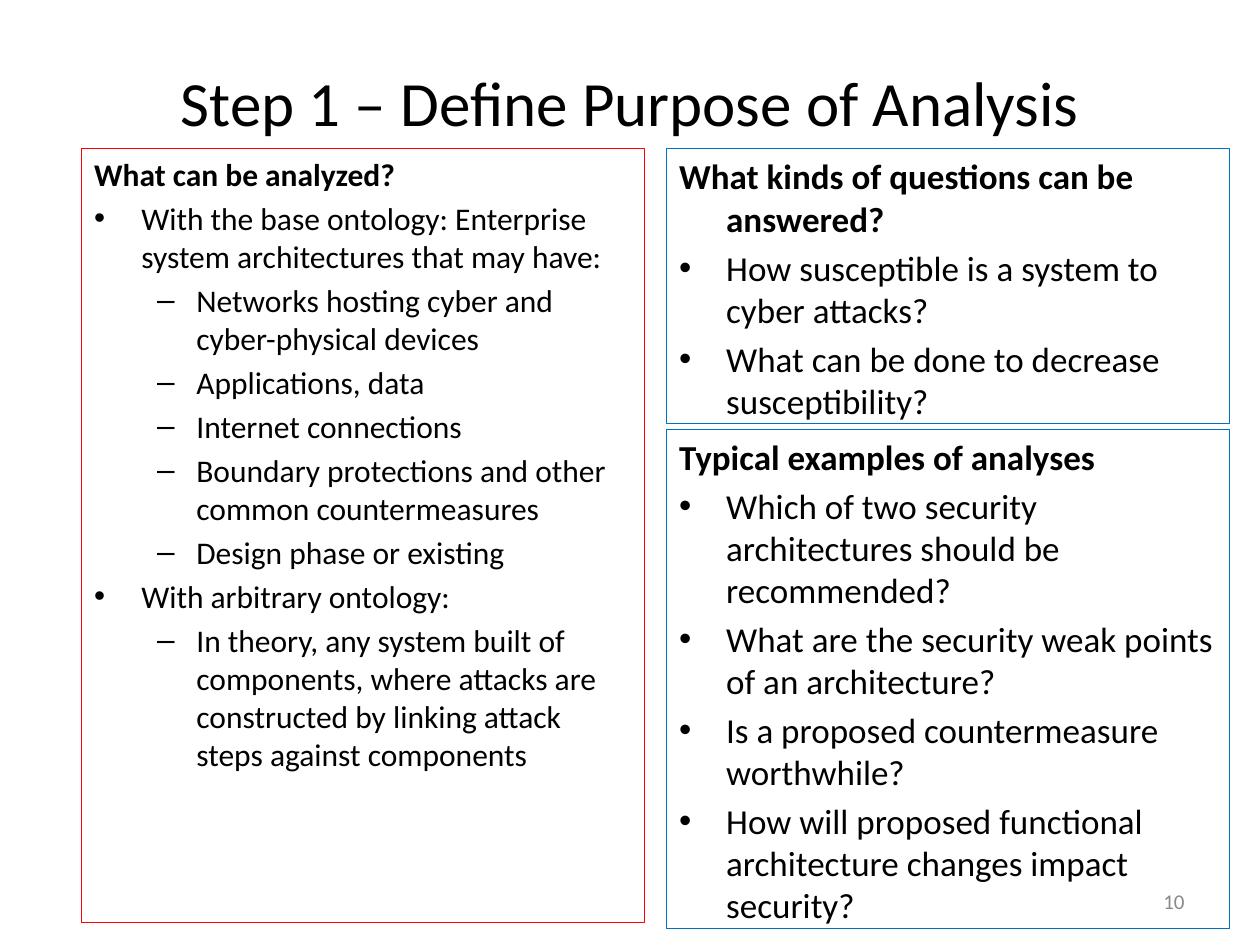
from dataclasses import dataclass

from lxml.etree import SubElement
from pptx import Presentation
from pptx.dml.color import RGBColor
from pptx.enum.shapes import MSO_SHAPE as Shape
from pptx.enum.text import MSO_ANCHOR as Anchor, PP_ALIGN as Align
from pptx.oxml.ns import qn
from pptx.util import Cm, Pt

COLORS = {"text": "000000", "number": "898989", "red": "FF0000", "blue": "0070C0"}
FONT = "Calibri"


@dataclass(frozen=True)
class Style:
    margin: float
    hanging: float
    bullet: str = ""
    bold: bool = False


HEADING = Style(0.95, 0.95, bold=True)
BULLET = Style(0.95, 0.95, "•")
DASH = Style(2.06, 0.79, "–")


@dataclass(frozen=True)
class Panel:
    left: float
    top: float
    height: float
    line: str
    size: int
    items: list[tuple[Style, str]]


@dataclass(frozen=True)
class Label:
    text: str
    left: float
    top: float
    width: float
    height: float
    size: int
    color: str
    align: Align


PANEL_WIDTH = 11.35
PANEL_TOP = 3
RIGHT_LEFT = 13.44

PANELS = [
    Panel(1.65, PANEL_TOP, 15.6, "red", 18, [
        (HEADING, "What can be analyzed?"),
        (BULLET, "With the base ontology: Enterprise system architectures that may have:"),
        (DASH, "Networks hosting cyber and cyber-physical devices"),
        (DASH, "Applications, data"),
        (DASH, "Internet connections"),
        (DASH, "Boundary protections and other common countermeasures"),
        (DASH, "Design phase or existing"),
        (BULLET, "With arbitrary ontology:"),
        (DASH, "In theory, any system built of components, where attacks are "
               "constructed by linking attack steps against components"),
    ]),
    Panel(RIGHT_LEFT, PANEL_TOP, 5.54, "blue", 20, [
        (HEADING, "What kinds of questions can be answered?"),
        (BULLET, "How susceptible is a system to cyber attacks?"),
        (BULLET, "What can be done to decrease susceptibility?"),
    ]),
    Panel(RIGHT_LEFT, 8.66, 10.06, "blue", 20, [
        (HEADING, "Typical examples of analyses"),
        (BULLET, "Which of two security architectures should be recommended?"),
        (BULLET, "What are the security weak points of an architecture?"),
        (BULLET, "Is a proposed countermeasure worthwhile?"),
        (BULLET, "How will proposed functional architecture changes impact security?"),
    ]),
]

LABELS = [
    Label("Step 1 – Define Purpose of Analysis", 1.27, 1.35, 22.86, 1.4, 36, "text", Align.CENTER),
    Label("10", 18.2, 17.65, 5.93, 1.02, 12, "number", Align.RIGHT),
]


def color(name: str) -> RGBColor:
    return RGBColor.from_string(COLORS[name])


def set_font(paragraph, size: int, color_name: str, bold: bool = False) -> None:
    font = paragraph.font
    font.name = FONT
    font.size = Pt(size)
    font.bold = bold
    font.color.rgb = color(color_name)


def set_indent(paragraph, style: Style) -> None:
    properties = paragraph._p.get_or_add_pPr()
    properties.set("marL", str(Cm(style.margin)))
    properties.set("indent", str(-Cm(style.hanging)))
    if style.bullet:
        SubElement(properties, qn("a:buFont"), typeface="Arial")
        SubElement(properties, qn("a:buChar"), char=style.bullet)
    else:
        SubElement(properties, qn("a:buNone"))


def draw_label(slide, label: Label) -> None:
    shape = slide.shapes.add_textbox(
        Cm(label.left), Cm(label.top), Cm(label.width), Cm(label.height))
    frame = shape.text_frame
    frame.word_wrap = True
    frame.vertical_anchor = Anchor.MIDDLE
    paragraph = frame.paragraphs[0]
    paragraph.text = label.text
    paragraph.alignment = label.align
    set_font(paragraph, label.size, label.color)


def draw_panel(slide, panel: Panel) -> None:
    shape = slide.shapes.add_shape(
        Shape.RECTANGLE, Cm(panel.left), Cm(panel.top), Cm(PANEL_WIDTH), Cm(panel.height))
    shape.shadow.inherit = False
    shape.fill.background()
    shape.line.color.rgb = color(panel.line)
    shape.line.width = Pt(0.75)
    frame = shape.text_frame
    frame.word_wrap = True
    frame.vertical_anchor = Anchor.TOP
    for index, (style, text) in enumerate(panel.items):
        paragraph = frame.add_paragraph() if index else frame.paragraphs[0]
        paragraph.text = text
        paragraph.alignment = Align.LEFT
        paragraph.level = 1 if style is DASH else 0
        set_indent(paragraph, style)
        paragraph.space_before = Pt(panel.size * 0.2 if index else 0)
        set_font(paragraph, panel.size, "text", style.bold)


def main() -> None:
    presentation = Presentation()
    presentation.slide_width = Cm(25.4)
    presentation.slide_height = Cm(19.05)
    slide = presentation.slides.add_slide(presentation.slide_layouts[6])
    for label in LABELS:
        draw_label(slide, label)
    for panel in PANELS:
        draw_panel(slide, panel)
    presentation.save("out.pptx")


if __name__ == "__main__":
    main()
